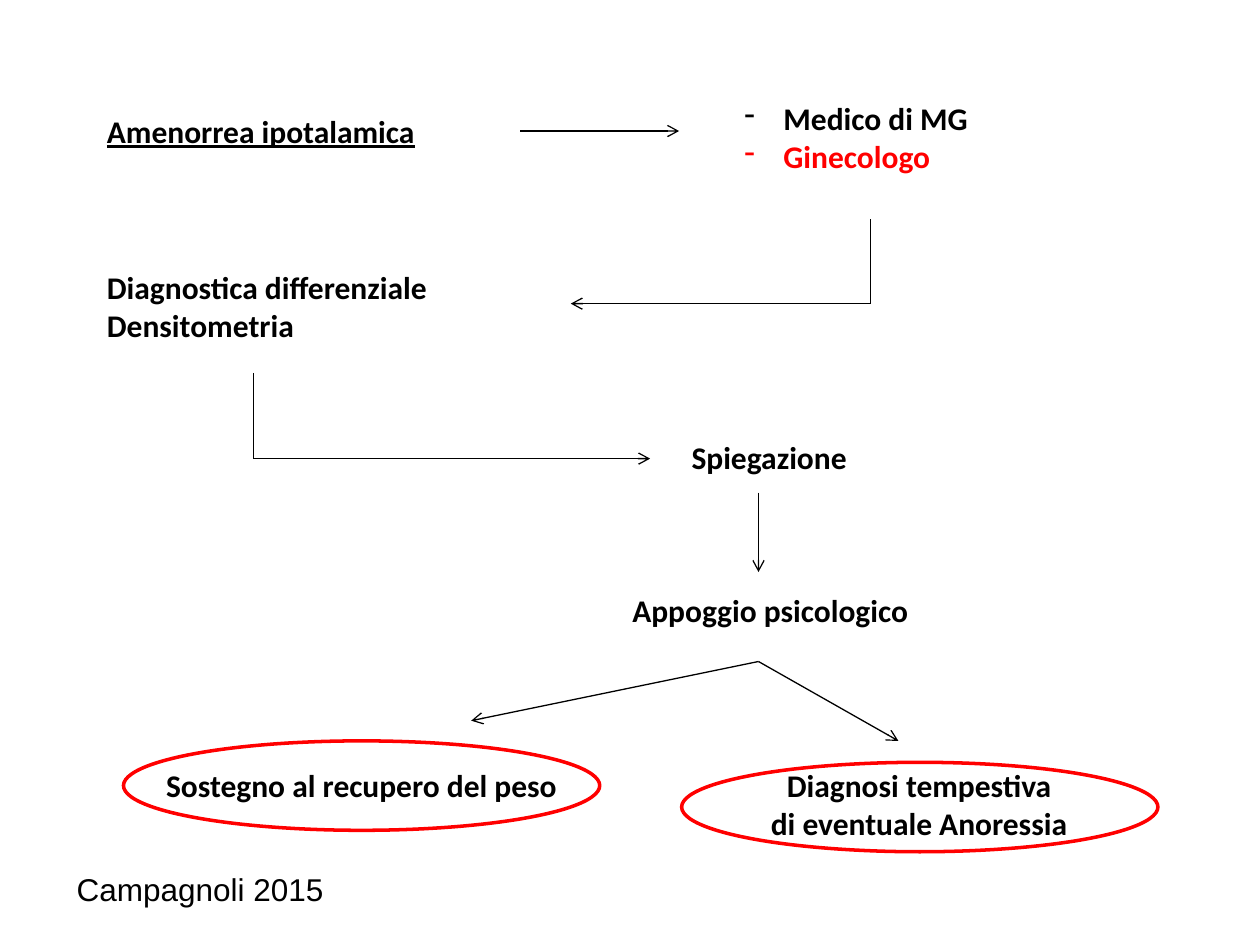
from dataclasses import dataclass

from lxml.etree import SubElement
from pptx import Presentation
from pptx.dml.color import RGBColor
from pptx.enum.shapes import MSO_CONNECTOR as Connector, MSO_SHAPE as Shape
from pptx.enum.text import MSO_AUTO_SIZE as AutoSize, PP_ALIGN as Align
from pptx.oxml.ns import qn
from pptx.util import Inches, Pt

COLUMNS, ROWS = 100, 75
BLACK, RED = "000000", "FF0000"

presentation = Presentation()
presentation.slide_width = Inches(10)
presentation.slide_height = Inches(7.5)
CELL_WIDTH = presentation.slide_width / COLUMNS
CELL_HEIGHT = presentation.slide_height / ROWS


@dataclass
class Box:
    left: float
    top: float

    def point(self, column, row):
        return (round((self.left + column) * CELL_WIDTH),
                round((self.top + row) * CELL_HEIGHT))

    def area(self, column, row, width, height):
        return (*self.point(column, row),
                round(width * CELL_WIDTH), round(height * CELL_HEIGHT))


def color(value):
    return RGBColor.from_string(value)


def add_dash(paragraph):
    properties = paragraph._p.get_or_add_pPr()
    properties.set("marL", str(Inches(0.31)))
    properties.set("indent", str(-Inches(0.31)))
    SubElement(properties, qn("a:buChar")).set("char", "-")


def add_text(slide, area, text, colors=(BLACK,), font="Calibri", bold=True,
             underline=False, align=Align.LEFT, dashed=False):
    frame = slide.shapes.add_textbox(*area).text_frame
    frame.word_wrap = True
    frame.auto_size = AutoSize.SHAPE_TO_FIT_TEXT
    for index, line in enumerate(text.split("\n")):
        paragraph = frame.add_paragraph() if index else frame.paragraphs[0]
        paragraph.alignment = align
        if dashed:
            add_dash(paragraph)
        run = paragraph.add_run()
        run.text = line
        run.font.name = font
        run.font.size = Pt(18)
        run.font.bold = bold
        run.font.underline = underline
        run.font.color.rgb = color(colors[index % len(colors)])


def add_path(slide, *points):
    for start, end in zip(points, points[1:]):
        connector = slide.shapes.add_connector(Connector.STRAIGHT, *start, *end)
        connector.line.width = Pt(0.75)
        connector.line.color.rgb = color(BLACK)
        if end == points[-1]:
            SubElement(connector.line._get_or_add_ln(), qn("a:tailEnd")).set("type", "arrow")
        SubElement(connector._element.spPr, qn("a:effectLst"))


def add_ellipse(slide, area):
    ellipse = slide.shapes.add_shape(Shape.OVAL, *area)
    ellipse.shadow.inherit = False
    ellipse.fill.background()
    ellipse.line.color.rgb = color(RED)
    ellipse.line.width = Pt(2)


def add_referral(slide, box):
    add_text(slide, box.area(0, 1, 29.9, 4), "Amenorrea ipotalamica", underline=True)
    add_path(slide, box.point(33.8, 3), box.point(46.4, 3))
    add_text(slide, box.area(50.6, 0, 22, 10.1), "Medico di MG\nGinecologo",
             colors=(BLACK, RED), dashed=True)
    add_path(slide, box.point(61.6, 10), box.point(61.6, 16.7), box.point(37.8, 16.7))


def add_diagnostics(slide, box):
    add_text(slide, box.area(0, 0, 28.4, 7.1), "Diagnostica differenziale\nDensitometria")
    add_path(slide, box.point(12.6, 8.8), box.point(12.6, 15.6), box.point(44.1, 15.6))


def add_support(slide, box):
    add_text(slide, box.area(4.7, 0, 19.9, 4), "Spiegazione")
    add_path(slide, box.point(11, 4.8), box.point(11, 11.1))
    add_text(slide, box.area(0, 12.1, 26.7, 4), "Appoggio psicologico")
    fork = box.point(11, 18.2)
    add_path(slide, fork, box.point(-11.8, 22.9))
    add_path(slide, fork, box.point(22.1, 24.5))


def add_outcomes(slide, box):
    add_text(slide, box.area(2.4, 1.5, 37, 4), "Sostegno al recupero del peso")
    add_text(slide, box.area(47.4, 1.5, 31.5, 7.1),
             "Diagnosi tempestiva\ndi eventuale Anoressia", align=Align.CENTER)
    for column, row in ((0, 0), (44.3, 1.7)):
        add_ellipse(slide, box.area(column, row, 37.8, 7.1))


def add_credit(slide, box):
    add_text(slide, box.area(0, 0, 38.6, 4), "Campagnoli 2015", font="Arial", bold=False)


def main():
    slide = presentation.slides.add_slide(presentation.slide_layouts[6])
    add_referral(slide, Box(7.5, 7.4))
    add_diagnostics(slide, Box(7.5, 20.8))
    add_support(slide, Box(49.2, 34.3))
    add_outcomes(slide, Box(9.8, 58.8))
    add_credit(slide, Box(5.1, 68.6))
    presentation.save("out.pptx")


if __name__ == "__main__":
    main()
